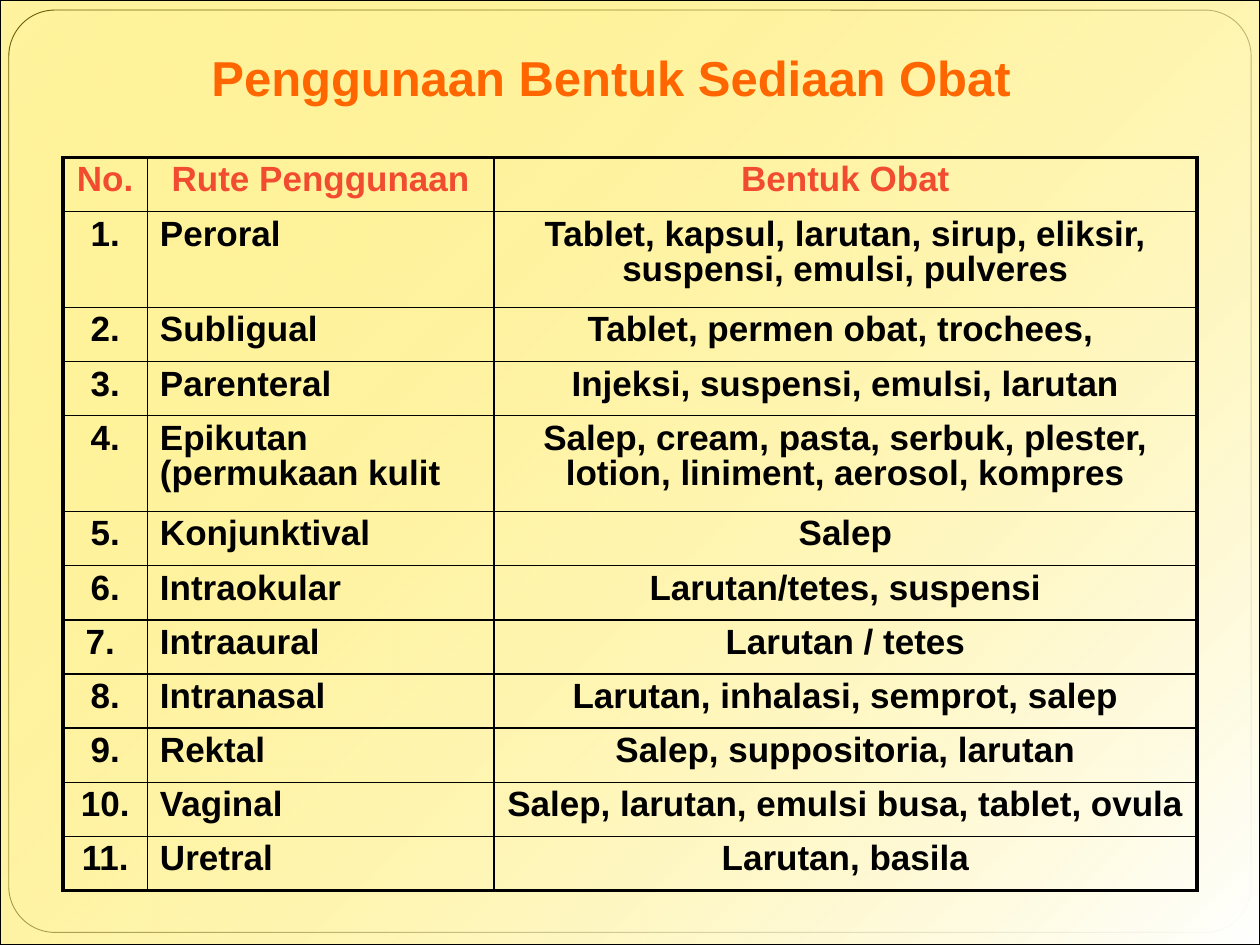
from dataclasses import dataclass

import pptx
import pptx.dml.color
import pptx.enum.shapes
import pptx.enum.text
import pptx.oxml
import pptx.oxml.ns
import pptx.util

PX = 9144  # EMU per px, 100 px to the inch
FONT = "Arial"
BLACK = "000000"
RED = "F24C30"
ORANGE = "FF6600"
THIN, THICK = 1, 2.25
LEFT = pptx.enum.text.PP_ALIGN.LEFT
CENTER = pptx.enum.text.PP_ALIGN.CENTER
SHAPES = pptx.enum.shapes.MSO_SHAPE


@dataclass
class Route:
    number: str
    name: str
    forms: str
    height: int = 43
    color: str = BLACK
    name_align: int = LEFT


ROUTES = [
    Route("No.", "Rute Penggunaan", "Bentuk Obat", color=RED, name_align=CENTER),
    Route("1.", "Peroral",
          "Tablet, kapsul, larutan, sirup, eliksir, suspensi, emulsi, pulveres", 76),
    Route("2.", "Subligual", "Tablet, permen obat, trochees, "),
    Route("3.", "Parenteral", "Injeksi, suspensi, emulsi, larutan"),
    Route("4.", "Epikutan (permukaan kulit",
          "Salep, cream, pasta, serbuk, plester, lotion, liniment, aerosol, kompres", 76),
    Route("5.", "Konjunktival", "Salep"),
    Route("6.", "Intraokular", "Larutan/tetes, suspensi"),
    Route("7. ", "Intraaural", "Larutan / tetes"),
    Route("8.", "Intranasal", "Larutan, inhalasi, semprot, salep"),
    Route("9.", "Rektal", "Salep, suppositoria, larutan"),
    Route("10.", "Vaginal", "Salep, larutan, emulsi busa, tablet, ovula"),
    Route("11.", "Uretral", "Larutan, basila"),
]
COLUMNS = [67, 275, 558]


def px(*lengths: int) -> list[pptx.util.Emu]:
    return [pptx.util.Emu(n * PX) for n in lengths]


def rgb(color: str) -> pptx.dml.color.RGBColor:
    return pptx.dml.color.RGBColor.from_string(color)


def write(tf, text: str, *, size: float, color: str, align=CENTER,
          line_spacing: float = 1.0, before: float = 0) -> None:
    p = tf.paragraphs[0]
    p.alignment = align
    p.line_spacing = line_spacing
    p.space_before = pptx.util.Pt(before)
    r = p.add_run()
    r.text = text
    r.font.name = FONT
    r.font.size = pptx.util.Pt(size)
    r.font.bold = True
    r.font.color.rgb = rgb(color)


def add_panel(s, kind, x: int, y: int, w: int, h: int, line_width: float):
    sp = s.shapes.add_shape(kind, *px(x, y, w, h))
    sp.shadow.inherit = False
    sp.line.color.rgb = rgb(BLACK)
    sp.line.width = pptx.util.Pt(line_width)
    return sp


def add_background(s) -> None:
    frame = add_panel(s, SHAPES.ROUNDED_RECTANGLE, 7, 8, 986, 732, 0.5)
    frame.adjustments[0] = 0.05
    frame.fill.solid()
    frame.fill.fore_color.rgb = rgb("FFFFFF")

    tint = add_panel(s, SHAPES.RECTANGLE, 0, 0, 1000, 750, 0.75)
    tint.fill.gradient()
    tint.fill.gradient_angle = 315
    for stop, color, position in zip(tint.fill.gradient_stops, ("FFE20F", "FFFFFF"), (0, 1)):
        stop.color.rgb = rgb(color)
        stop.position = position
    yellow = tint._element.spPr.find(".//" + pptx.oxml.ns.qn("a:srgbClr"))
    yellow.append(pptx.oxml.parse_xml(
        f'<a:alpha {pptx.oxml.ns.nsdecls("a")} val="40000"/>'))


def add_title(s, text: str) -> None:
    tf = s.shapes.add_textbox(*px(145, 33, 680, 75)).text_frame
    tf.word_wrap = False
    write(tf, text, size=28, color=ORANGE)


def set_borders(cell, **widths: float) -> None:
    """Draw black borders; the keywords L, R, T and B give widths in points."""
    tc_pr = cell._tc.get_or_add_tcPr()
    for side, width in widths.items():
        tc_pr.append(pptx.oxml.parse_xml(
            f'<a:ln{side} {pptx.oxml.ns.nsdecls("a")} w="{pptx.util.Pt(width)}">'
            f'<a:solidFill><a:srgbClr val="{BLACK}"/></a:solidFill></a:ln{side}>'))


def add_route_table(s, x: int, y: int) -> None:
    heights = [route.height for route in ROUTES]
    last_row, last_col = len(ROUTES) - 1, len(COLUMNS) - 1
    table = s.shapes.add_table(len(ROUTES), len(COLUMNS),
                               *px(x, y, sum(COLUMNS), sum(heights))).table
    table.first_row = table.horz_banding = False
    for column, width in zip(table.columns, px(*COLUMNS)):
        column.width = width
    for row, height in zip(table.rows, px(*heights)):
        row.height = height
    for i, route in enumerate(ROUTES):
        contents = [(route.number, CENTER), (route.name, route.name_align),
                    (route.forms, CENTER)]
        for j, (text, align) in enumerate(contents):
            cell = table.cell(i, j)
            write(cell.text_frame, text, size=20, color=route.color, align=align,
                  line_spacing=0.9, before=4)
            set_borders(cell,
                        L=THICK if j == 0 else THIN,
                        R=THICK if j == last_col else THIN,
                        T=THICK if i == 0 else THIN,
                        B=THICK if i == last_row else THIN)
            cell.fill.background()


def main() -> None:
    prs = pptx.Presentation()
    prs.slide_width, prs.slide_height = px(1000, 750)
    s = prs.slides.add_slide(prs.slide_layouts[6])
    add_background(s)
    add_title(s, "Penggunaan Bentuk Sediaan Obat")
    add_route_table(s, 50, 125)
    prs.save("out.pptx")


if __name__ == "__main__":
    main()
